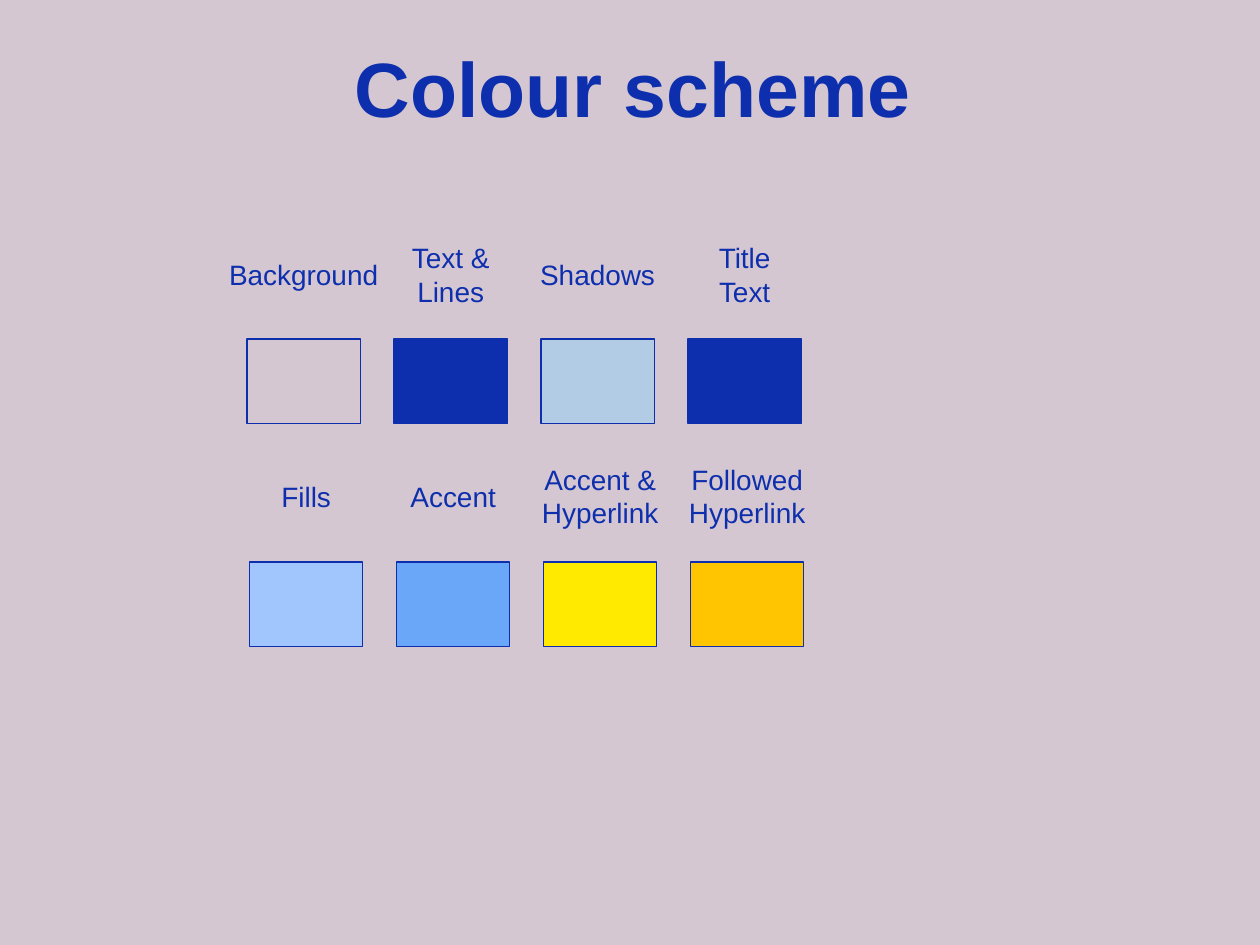
from dataclasses import dataclass

import pptx
import pptx.dml.color
import pptx.enum.shapes
import pptx.enum.text
import pptx.util

COLOURS = {
    "background": "D5C7D1",
    "text": "0E2FAD",
    "shadow": "B3CCE6",
    "fill": "A1C6FD",
    "accent": "6BA7F8",
    "hyperlink": "FFEA00",
    "followed": "FFC500",
}
FONT = "Arial"
SLIDE_WIDTH, SLIDE_HEIGHT = 10, 7.5

# Grid of swatches, in inches
COLUMN_PITCH = 3.5 / 3
ROW_LEFTS = (1.96, 1.98)
SWATCH_TOPS = (2.69, 4.46)
LABEL_MIDDLES = (2.18, 3.94)
SWATCH_WIDTH, SWATCH_HEIGHT = 0.9, 0.67
LABEL_PADDING, LINE_HEIGHT = 0.1, 0.27


@dataclass(frozen=True)
class Swatch:
    row: int
    column: int
    paragraphs: tuple[str, ...]
    label_width: float
    colour: str

    @property
    def left(self) -> float:
        return ROW_LEFTS[self.row] + self.column * COLUMN_PITCH


SWATCHES = (
    Swatch(0, 0, ("Background",), 1.4, "background"),
    Swatch(0, 1, ("Text &", "Lines"), 0.85, "text"),
    Swatch(0, 2, ("Shadows",), 1.13, "shadow"),
    Swatch(0, 3, ("Title\nText",), 0.65, "text"),
    Swatch(1, 0, ("Fills",), 0.62, "fill"),
    Swatch(1, 1, ("Accent",), 0.9, "accent"),
    Swatch(1, 2, ("Accent &", "Hyperlink"), 1.15, "hyperlink"),
    Swatch(1, 3, ("Followed", "Hyperlink"), 1.15, "followed"),
)


def rgb(name: str) -> pptx.dml.color.RGBColor:
    return pptx.dml.color.RGBColor.from_string(COLOURS[name])


def inches(*lengths: float) -> list[pptx.util.Length]:
    return [pptx.util.Inches(length) for length in lengths]


def write(paragraph, text: str, size: float, bold: bool = False) -> None:
    """Add centred text, with a line break at each newline."""
    paragraph.alignment = pptx.enum.text.PP_ALIGN.CENTER
    for index, line in enumerate(text.split("\n")):
        if index:
            paragraph.add_line_break()
        run = paragraph.add_run()
        run.text = line
        run.font.name = FONT
        run.font.size = pptx.util.Pt(size)
        run.font.bold = bold
        run.font.color.rgb = rgb("text")


def draw_title(slide, text: str) -> None:
    title = slide.shapes.title
    title.left, title.top, title.width, title.height = inches(0.49, 0.29, 9.07, 0.79)
    title.text_frame.vertical_anchor = pptx.enum.text.MSO_ANCHOR.MIDDLE
    title.text_frame.auto_size = pptx.enum.text.MSO_AUTO_SIZE.NONE
    write(title.text_frame.paragraphs[0], text, 44, bold=True)


def draw_colour(slide, swatch: Swatch) -> None:
    rectangle = slide.shapes.add_shape(
        pptx.enum.shapes.MSO_SHAPE.RECTANGLE,
        *inches(swatch.left, SWATCH_TOPS[swatch.row], SWATCH_WIDTH, SWATCH_HEIGHT),
    )
    rectangle.shadow.inherit = False
    rectangle.fill.solid()
    rectangle.fill.fore_color.rgb = rgb(swatch.colour)
    rectangle.line.color.rgb = rgb("text")
    rectangle.line.width = pptx.util.Pt(0.75)


def draw_label(slide, swatch: Swatch) -> None:
    """Centre the label above its swatch and around the row's label line."""
    line_count = len("\n".join(swatch.paragraphs).split("\n"))
    height = LABEL_PADDING + line_count * LINE_HEIGHT
    left = swatch.left + (SWATCH_WIDTH - swatch.label_width) / 2
    top = LABEL_MIDDLES[swatch.row] - height / 2
    label = slide.shapes.add_textbox(*inches(left, top, swatch.label_width, height))
    frame = label.text_frame
    frame.word_wrap = False
    frame.auto_size = pptx.enum.text.MSO_AUTO_SIZE.SHAPE_TO_FIT_TEXT
    for index, text in enumerate(swatch.paragraphs):
        write(frame.add_paragraph() if index else frame.paragraphs[0], text, 16)


def main() -> None:
    presentation = pptx.Presentation()
    presentation.slide_width, presentation.slide_height = inches(SLIDE_WIDTH, SLIDE_HEIGHT)
    title_only = presentation.slide_layouts.get_by_name("Title Only")
    slide = presentation.slides.add_slide(title_only)
    slide.background.fill.solid()
    slide.background.fill.fore_color.rgb = rgb("background")

    draw_title(slide, "Colour scheme")
    for swatch in SWATCHES:
        draw_colour(slide, swatch)
    for swatch in SWATCHES:
        draw_label(slide, swatch)

    presentation.save("out.pptx")


if __name__ == "__main__":
    main()
